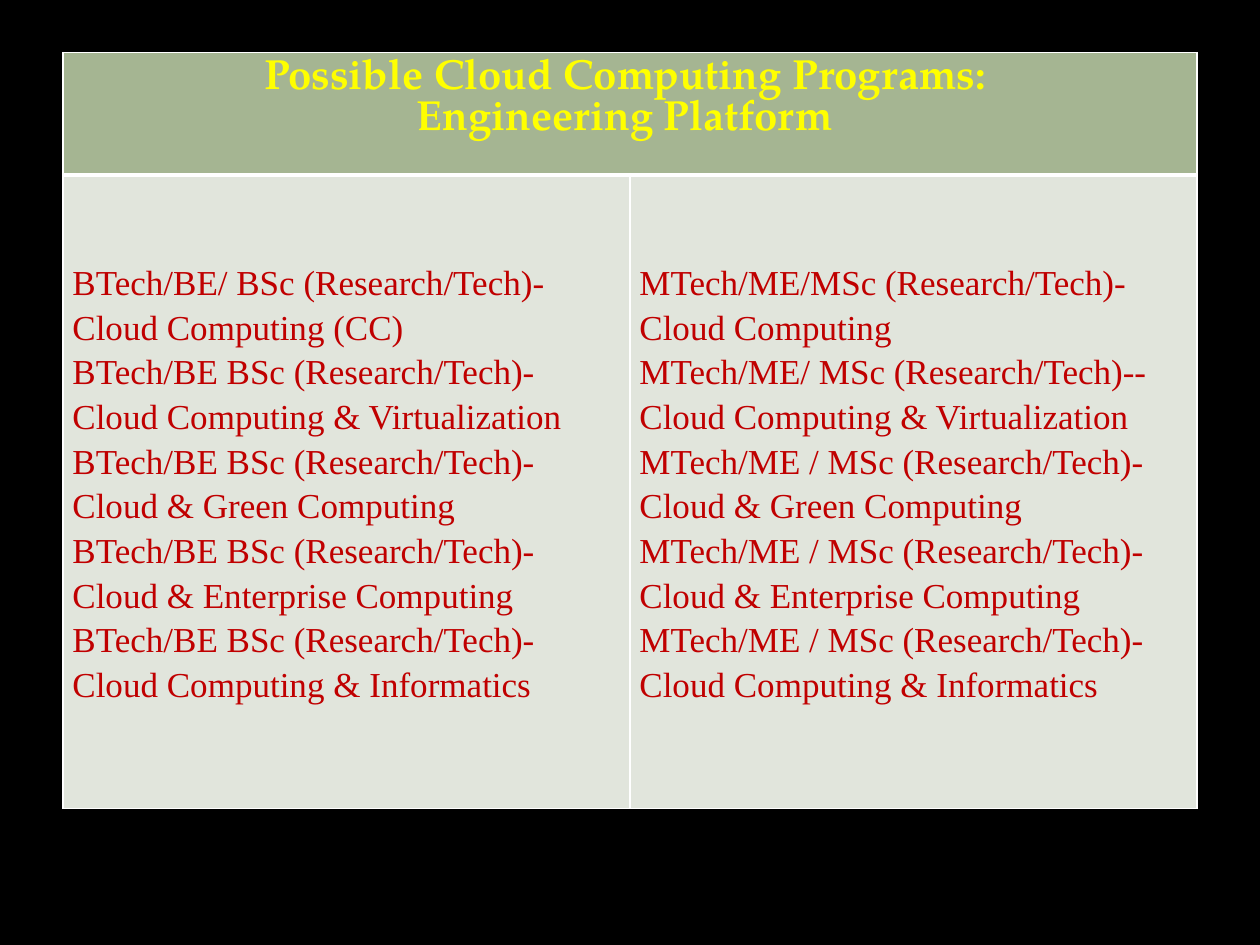
import pptx
import pptx.dml.color
import pptx.enum.text
import pptx.oxml
import pptx.oxml.ns
import pptx.util
from pptx.util import Cm, Pt

TITLE = ["Possible Cloud Computing Programs: ", "Engineering Platform "]
BACHELOR = [
    "BTech/BE/ BSc (Research/Tech)-Cloud Computing (CC)",
    "BTech/BE BSc (Research/Tech)-Cloud Computing & Virtualization",
    "BTech/BE BSc (Research/Tech)-Cloud & Green Computing",
    "BTech/BE BSc (Research/Tech)-Cloud & Enterprise Computing",
    "BTech/BE BSc (Research/Tech)-Cloud Computing & Informatics",
]
MASTER = [
    "MTech/ME/MSc (Research/Tech)-Cloud Computing",
    "MTech/ME/ MSc (Research/Tech)--Cloud Computing & Virtualization",
    "MTech/ME / MSc (Research/Tech)-Cloud & Green Computing",
    "MTech/ME / MSc (Research/Tech)-Cloud & Enterprise Computing",
    "MTech/ME / MSc (Research/Tech)-Cloud Computing & Informatics",
]


def paint(fill, color):
    fill.solid()
    fill.fore_color.rgb = pptx.dml.color.RGBColor.from_string(color)


def border(cell, base=1):
    """Draw white cell edges, with the bottom one base points wide."""
    props = cell._tc.get_or_add_tcPr()
    widths = {"lnL": 1, "lnR": 1, "lnT": 1, "lnB": base}
    for spot, (tag, width) in enumerate(widths.items()):
        line = pptx.oxml.parse_xml(
            f'<a:{tag} {pptx.oxml.ns.nsdecls("a")} w="{Pt(width)}">'
            '<a:solidFill><a:srgbClr val="FFFFFF"/></a:solidFill>'
            f'</a:{tag}>')
        props.insert(spot, line)


def write(cell, lines, font, size, color, bold=False):
    cell.text = "\n".join(lines)
    for para in cell.text_frame.paragraphs:
        para.font.name = font
        para.font.size = Pt(size)
        para.font.bold = bold
        paint(para.font.fill, color)


def head(cell):
    write(cell, TITLE, "TeX Gyre Pagella", 24, "FFFF00", True)
    for para in cell.text_frame.paragraphs:
        para.alignment = pptx.enum.text.PP_ALIGN.CENTER
    paint(cell.fill, "A5B592")


def column(cell, items):
    write(cell, items, "Times New Roman", 20, "C00000")
    for para in cell.text_frame.paragraphs:
        para.line_spacing = 1.15
    cell.margin_left = cell.margin_right = Cm(0.19)
    cell.margin_top, cell.margin_bottom = Cm(1.68), 0
    paint(cell.fill, "E1E5DC")
    border(cell)


def programs(slide, left, top, width, height):
    grid = slide.shapes.add_table(2, 2, left, top, width, height).table
    grid.horz_banding = False
    grid.rows[0].height = Cm(2.47)
    grid.rows[1].height = height - Cm(2.47)
    grid.cell(0, 0).merge(grid.cell(0, 1))
    head(grid.cell(0, 0))
    for col, items in enumerate((BACHELOR, MASTER)):
        border(grid.cell(0, col), 3)
        column(grid.cell(1, col), items)


def main():
    deck = pptx.Presentation()
    deck.slide_width, deck.slide_height = Cm(25.4), Cm(19.05)
    slide = deck.slides.add_slide(deck.slide_layouts[6])
    paint(slide.background.fill, "000000")
    programs(slide, Cm(1.27), Cm(1.06), Cm(22.86), Cm(15.24))
    deck.save("out.pptx")


if __name__ == "__main__":
    main()
